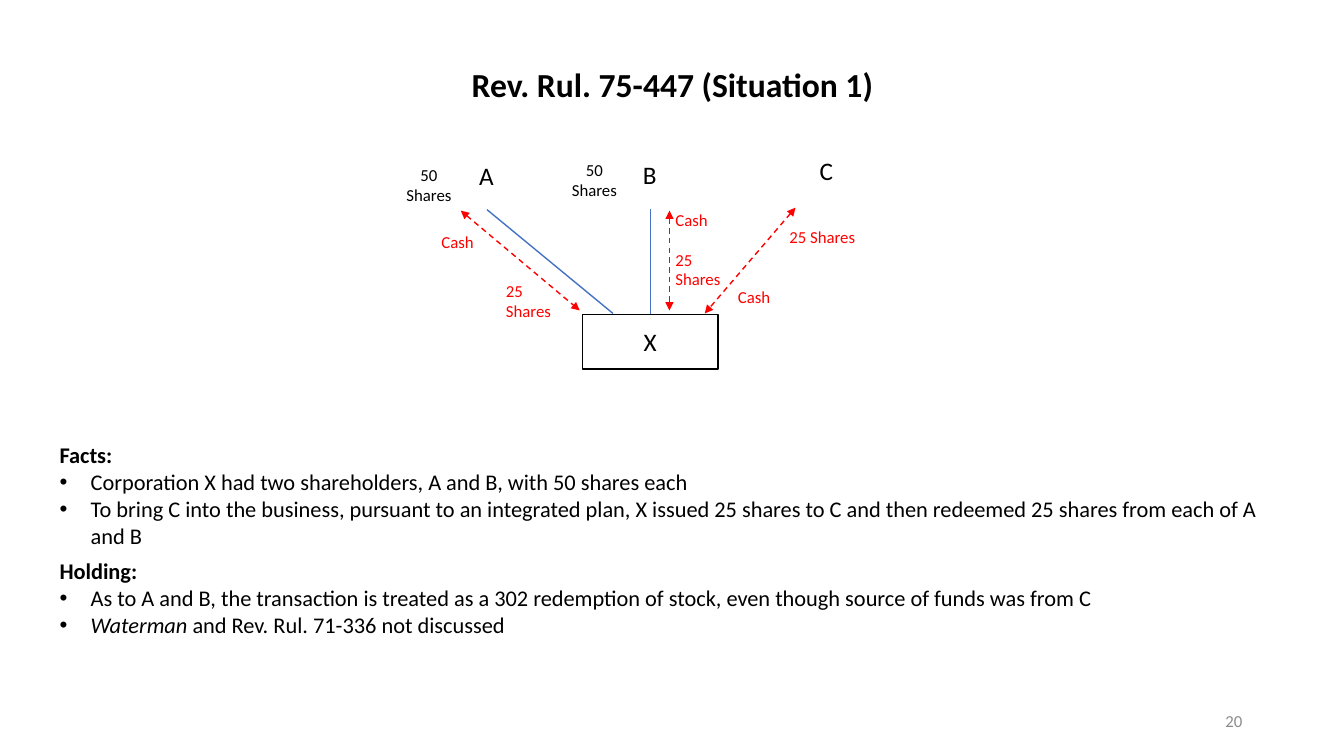
from pptx import Presentation
from pptx.dml.color import RGBColor
from pptx.enum.dml import MSO_LINE
from pptx.enum.shapes import MSO_CONNECTOR, MSO_SHAPE
from pptx.enum.text import MSO_ANCHOR, MSO_AUTO_SIZE, PP_ALIGN
from pptx.oxml.ns import qn
from pptx.util import Inches, Pt
from lxml import etree

BLACK = RGBColor(0x00, 0x00, 0x00)
WHITE = RGBColor(0xFF, 0xFF, 0xFF)
RED = RGBColor(0xFF, 0x00, 0x00)
BLUE = RGBColor(0x44, 0x72, 0xC4)
GREY = RGBColor(0x8C, 0x8C, 0x8C)
LEFT, CENTER, RIGHT = PP_ALIGN.LEFT, PP_ALIGN.CENTER, PP_ALIGN.RIGHT
TOP, MIDDLE = MSO_ANCHOR.TOP, MSO_ANCHOR.MIDDLE
RECT, OVAL = MSO_SHAPE.RECTANGLE, MSO_SHAPE.OVAL
STRAIGHT, DASH = MSO_CONNECTOR.STRAIGHT, MSO_LINE.DASH
NO_FIT = MSO_AUTO_SIZE.NONE


class SlideBuilder:
    font = "Calibri"

    def __init__(self, slide):
        self.slide = slide
        self.shapes = slide.shapes

    def run(self, p, text, size, color=BLACK, bold=False, italic=False):
        r = p.add_run()
        r.text = text
        f = r.font
        f.name, f.size, f.bold, f.italic = self.font, Pt(size), bold, italic
        f.color.rgb = color

    def place(self, sp, at):
        sp.left, sp.top, sp.width, sp.height = map(Inches, at)
        tf = sp.text_frame
        tf.word_wrap, tf.auto_size, tf.vertical_anchor = True, NO_FIT, TOP
        return tf

    def title(self, at, text):
        p = self.place(self.shapes.title, at).paragraphs[0]
        p.alignment, p.line_spacing = CENTER, 1.0
        self.run(p, text, 24, bold=True)

    def body(self, at, sections):
        tf = self.place(self.slide.placeholders[1], at)
        p = tf.paragraphs[0]
        for i, (heading, items) in enumerate(sections):
            if i:
                p.space_after = Pt(6)
                p = tf.add_paragraph()
            self.list_format(p, bullet=False)
            self.run(p, heading, 16, bold=True)
            for item in items:
                p = tf.add_paragraph()
                self.list_format(p, bullet=True)
                for text, italic in item:
                    self.run(p, text, 16, italic=italic)

    def list_format(self, p, bullet):
        p.alignment, p.line_spacing = LEFT, 1.0
        p.space_before = p.space_after = Pt(0)
        indent = Inches(0.31) if bullet else 0
        pPr = p._p.get_or_add_pPr()
        pPr.set("marL", str(indent))
        pPr.set("indent", str(-indent))
        if bullet:
            etree.SubElement(pPr, qn("a:buFont")).set("typeface", "Arial")
            etree.SubElement(pPr, qn("a:buChar")).set("char", "•")
        else:
            etree.SubElement(pPr, qn("a:buNone"))

    def label(self, at, lines, color=RED, align=LEFT, spacing=Pt(14), anchor=TOP):
        tf = self.place(self.shapes.add_textbox(0, 0, 0, 0), at)
        tf.vertical_anchor = anchor
        for i, text in enumerate(lines):
            p = tf.add_paragraph() if i else tf.paragraphs[0]
            p.alignment, p.line_spacing = align, spacing
            self.run(p, text, 12, color)

    def node(self, kind, at, text, fill=None, line=None):
        sp = self.shapes.add_shape(kind, *map(Inches, at))
        sp.shadow.inherit = False
        if fill is None:
            sp.fill.background()
        else:
            sp.fill.solid()
            sp.fill.fore_color.rgb = fill
        if line is None:
            sp.line.fill.background()
        else:
            sp.line.color.rgb, sp.line.width = line, Pt(1)
        tf = sp.text_frame
        tf.vertical_anchor = MIDDLE
        p = tf.paragraphs[0]
        p.alignment = CENTER
        self.run(p, text, 18)

    def line(self, start, end, color, exchange=False):
        cx = self.shapes.add_connector(STRAIGHT, *map(Inches, start + end))
        cx.line.color.rgb, cx.line.width = color, Pt(1)
        if exchange:
            cx.line.dash_style = DASH
            ln = cx.line._get_or_add_ln()
            for tag in ("a:headEnd", "a:tailEnd"):
                etree.SubElement(ln, qn(tag)).set("type", "triangle")
        etree.SubElement(cx._element.spPr, qn("a:effectLst"))


def main():
    prs = Presentation()
    prs.slide_width, prs.slide_height = Inches(13.33), Inches(7.5)
    s = SlideBuilder(prs.slides.add_slide(prs.slide_layouts[1]))

    # Title, facts and holding
    s.title((0.92, 0.58, 11.5, 0.67), "Rev. Rul. 75-447 (Situation 1)")
    s.body((0.49, 4.33, 12.35, 2.07), [
        ("Facts:", [
            [("Corporation X had two shareholders, A and B, with 50 shares each", False)],
            [("To bring C into the business, pursuant to an integrated plan, X issued "
              "25 shares to C and then redeemed 25 shares from each of A and B", False)],
        ]),
        ("Holding:", [
            [("As to A and B, the transaction is treated as a 302 redemption of stock, "
              "even though source of funds was from C", False)],
            [("Waterman", True), (" and Rev. Rul. 71-336 not discussed", False)],
        ]),
    ])

    # Corporation and shareholders
    s.node(RECT, (5.78, 3.12, 1.34, 0.54), "X", line=BLACK)
    for name, x, y in (("A", 4.5, 1.41), ("B", 6.12, 1.4), ("C", 7.87, 1.36)):
        s.node(OVAL, (x, y, 0.65, 0.67), name, fill=WHITE)

    # Ownership lines and holdings
    s.line((4.83, 2.08), (6.08, 3.11), BLUE)
    s.line((6.45, 2.07), (6.45, 3.12), BLUE)
    for x, y in ((3.86, 1.59), (5.5, 1.54)):
        s.label((x, y, 0.79, 0.34), ["50 Shares"], BLACK, CENTER)

    # Exchanges of cash and shares
    for start, end in (((4.57, 2.09), (5.75, 3.08)),
                       ((6.64, 2.09), (6.64, 3.08)),
                       ((7.89, 2.06), (6.99, 3.11))):
        s.line(start, end, RED, exchange=True)
    for x, y, lines in ((4.28, 2.26, ["Cash"]), (4.92, 2.74, ["25", "Shares"]),
                        (6.6, 2.04, ["Cash"]), (6.6, 2.43, ["25", "Shares"]),
                        (7.22, 2.8, ["Cash"]), (7.73, 2.21, ["25 Shares"])):
        s.label((x, y, 1.33, 0.21), lines)

    # Slide number
    s.label((9.42, 6.95, 3, 0.4), ["20"], GREY, RIGHT, 1.0, MIDDLE)

    prs.save("out.pptx")


if __name__ == "__main__":
    main()
